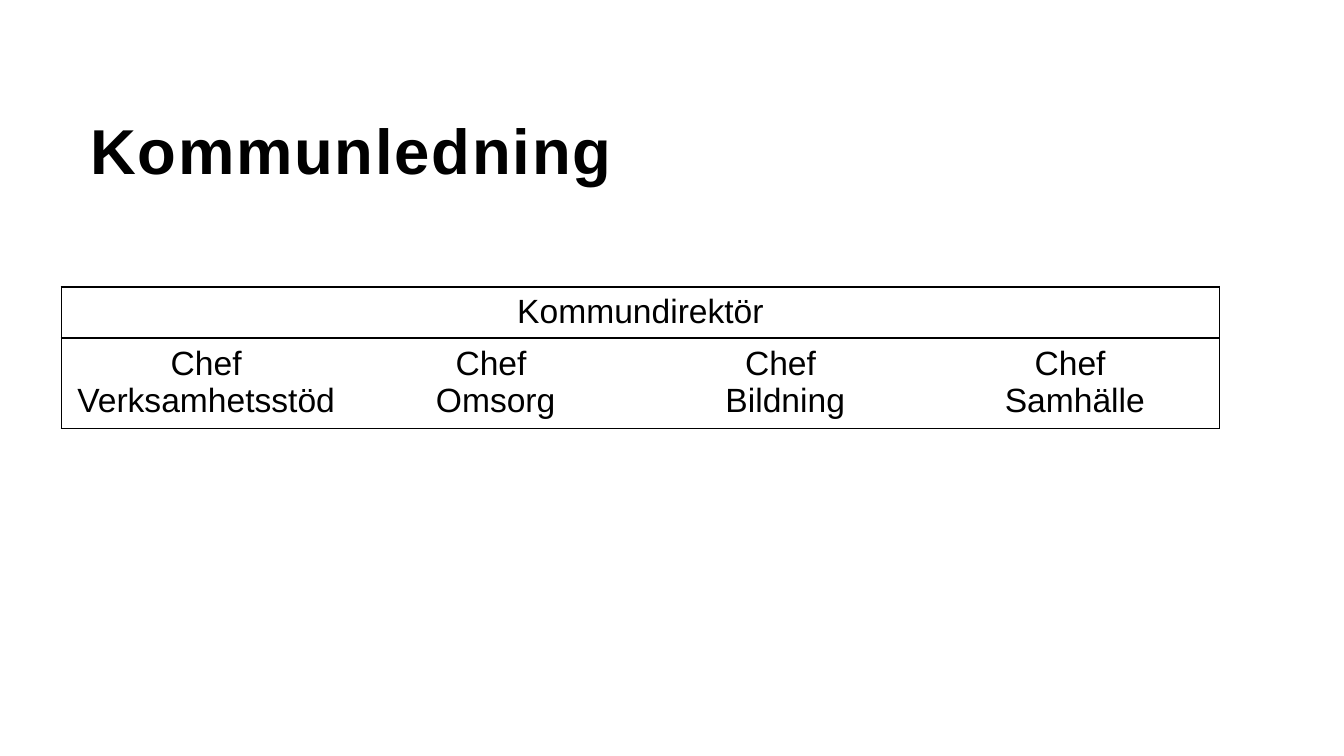
import pptx
import pptx.util
import pptx.dml.color
import pptx.enum.text
import pptx.oxml
import pptx.oxml.ns

Cm = pptx.util.Cm
Pt = pptx.util.Pt

THEME = {
    "ink": "000000",
    "face": "Arial",
    "title": Pt(34),
    "cell": Pt(18),
    "line": Pt(1),
}
CHIEFS = ["Chef\nVerksamhetsstöd", "Chef \vOmsorg", "Chef \vBildning", "Chef \vSamhälle"]


def style(text, size, bold, align):
    look = {"name": THEME["face"], "size": size, "bold": bold}
    for para in text.paragraphs:
        para.alignment = align
        for key, value in look.items():
            setattr(para.font, key, value)
        para.font.color.rgb = pptx.dml.color.RGBColor.from_string(THEME["ink"])


def add_title(slide, words):
    shape = slide.shapes.title
    place = {"left": Cm(1.45), "top": Cm(1.98), "width": Cm(17.93), "height": Cm(1.27)}
    for key, value in place.items():
        setattr(shape, key, value)
    text = shape.text_frame
    frame = {
        "text": words,
        "word_wrap": True,
        "auto_size": pptx.enum.text.MSO_AUTO_SIZE.NONE,
        "vertical_anchor": pptx.enum.text.MSO_ANCHOR.TOP,
    }
    for key, value in frame.items():
        setattr(text, key, value)
    style(text, THEME["title"], True, pptx.enum.text.PP_ALIGN.LEFT)
    for run in text.paragraphs[0].runs:
        run.font._element.set("spc", "100")


def edge(cell, sides):
    props = cell._tc.get_or_add_tcPr()
    for spot, side in enumerate("LRTB"):
        if side in sides:
            paint = f'<a:solidFill><a:srgbClr val="{THEME["ink"]}"/></a:solidFill>'
        else:
            paint = "<a:noFill/>"
        line = pptx.oxml.parse_xml(
            f'<a:ln{side} {pptx.oxml.ns.nsdecls("a")} w="{THEME["line"]}">{paint}</a:ln{side}>'
        )
        props.insert(spot, line)


def fill_cell(cell, words, sides):
    cell.text = words
    cell.fill.background()
    edge(cell, sides)
    style(cell.text_frame, THEME["cell"], False, pptx.enum.text.PP_ALIGN.CENTER)


def add_chart(slide, head, chiefs):
    count = len(chiefs)
    frame = slide.shapes.add_table(2, count, Cm(1.16), Cm(5.42), Cm(21.89), Cm(2.66))
    table = frame.table
    for key in ("first_row", "horz_banding"):
        setattr(table, key, False)
    for row, height in zip(table.rows, (0.95, 1.71)):
        row.height = Cm(height)
    table.cell(0, 0).merge(table.cell(0, count - 1))
    for col, words in enumerate(chiefs):
        ends = {0: "L", count - 1: "R"}.get(col, "")
        fill_cell(table.cell(0, col), "" if col else head, "TB" + ("LR" if col == 0 else ends))
        fill_cell(table.cell(1, col), words, "TB" + ends)


def main():
    deck = pptx.Presentation()
    deck.slide_width = Cm(25.4)
    deck.slide_height = Cm(14.29)
    slide = deck.slides.add_slide(deck.slide_layouts[5])
    add_chart(slide, "Kommundirektör", CHIEFS)
    add_title(slide, "Kommunledning")
    deck.save("out.pptx")


if __name__ == "__main__":
    main()
